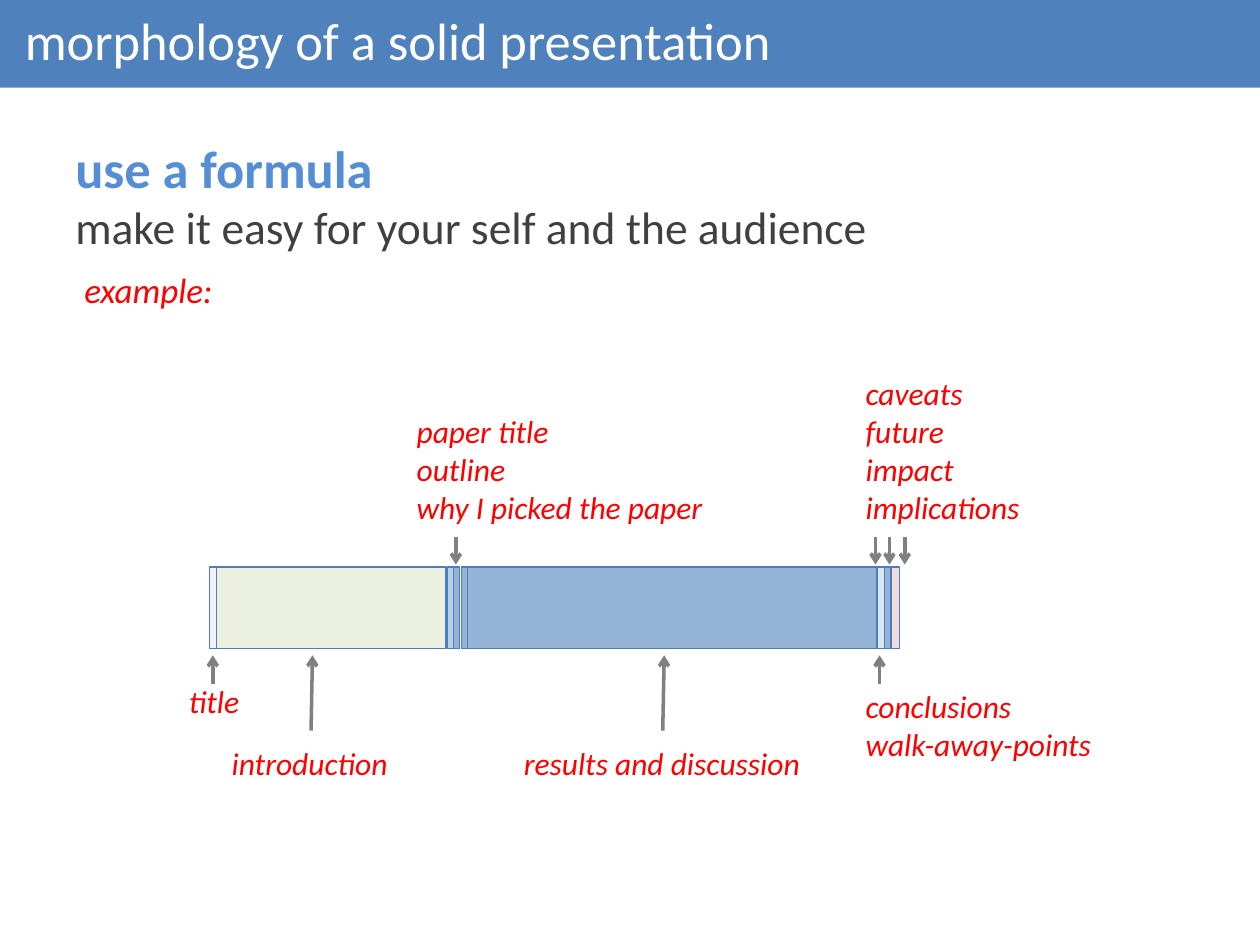
import pptx
import pptx.util
import pptx.dml.color
import pptx.enum.shapes
import pptx.enum.text
import pptx.oxml
import pptx.oxml.ns

Cm, Pt = pptx.util.Cm, pptx.util.Pt
RGB = pptx.dml.color.RGBColor.from_string
RECT = pptx.enum.shapes.MSO_SHAPE.RECTANGLE
STRAIGHT = pptx.enum.shapes.MSO_CONNECTOR.STRAIGHT
LEFT = pptx.enum.text.PP_ALIGN.LEFT

HUES = {
    "band": "4F81BD", "white": "FFFFFF", "head": "558ED5", "body": "404040",
    "note": "FF0000", "arrow": "808080", "edge": "4B7EBC", "pale": "F2F2F2",
    "green": "EBF1DE", "light": "B9CDE5", "blue": "95B3D7", "ice": "DCE6F2",
    "pink": "F2DCDB",
}
FRAME = {
    "word_wrap": False,
    "auto_size": pptx.enum.text.MSO_AUTO_SIZE.NONE,
    "vertical_anchor": pptx.enum.text.MSO_ANCHOR.TOP,
    "margin_left": Cm(0.25), "margin_right": Cm(0.25),
    "margin_top": Cm(0.13), "margin_bottom": Cm(0.13),
}


def write(shape, rows):
    """Fill a shape with one paragraph per (text, hue, font values) row."""
    frame = shape.text_frame
    for name, value in FRAME.items():
        setattr(frame, name, value)
    frame.text = "\n".join(text for text, hue, style in rows)
    for para, (text, hue, style) in zip(frame.paragraphs, rows):
        para.alignment = LEFT
        font = para.runs[0].font
        font.color.rgb = RGB(HUES[hue])
        for name, value in {"name": "Calibri", **style}.items():
            setattr(font, name, value)


def block(left, top, width, height, hue):
    """Add a filled rectangle without line or shadow."""
    rect = slide.shapes.add_shape(RECT, Cm(left), Cm(top), Cm(width), Cm(height))
    rect.shadow.inherit = False
    rect.fill.solid()
    rect.fill.fore_color.rgb = RGB(HUES[hue])
    rect.line.fill.background()
    return rect


deck = pptx.Presentation()
deck.slide_width, deck.slide_height = Cm(25.4), Cm(19.05)
slide = deck.slides.add_slide(deck.slide_layouts[5])

# Title on its band
title = slide.shapes.title
place = {"left": Cm(0.25), "top": Cm(0.03), "width": Cm(15.75), "height": Cm(1.55)}
for name, value in place.items():
    setattr(title, name, value)
write(title, [("morphology of a solid presentation", "white", {"size": Pt(30)})])
band = block(-0.03, -0.03, 25.43, 1.8, "band")
title.element.addprevious(band.element)

# Heading
head = slide.shapes.add_textbox(Cm(1.27), Cm(2.62), Cm(16.69), Cm(2.64))
write(head, [
    ("use a formula", "head", {"size": Pt(30), "bold": True}),
    ("make it easy for your self and the audience", "body", {"size": Pt(26)}),
])

# Timeline: left, width, hue
for left, width, hue in [
    (4.22, 0.15, "pale"), (4.37, 4.62, "green"), (9.02, 0.13, "light"),
    (9.42, 8.53, "blue"), (17.68, 0.15, "ice"), (9.14, 0.13, "blue"),
    (17.96, 0.18, "pink"), (9.3, 0.13, "blue"),
]:
    part = block(left, 11.43, width, 1.65, hue)
    part.line.color.rgb = RGB(HUES["edge"])
    part.line.width = Pt(0.75)

# Notes: left, top, width, height, size, lines
for left, top, width, height, size, lines in [
    (1.45, 5.28, 3.2, 1.12, 20, ["example:"]),
    (3.56, 13.61, 1.57, 1.02, 18, ["title"]),
    (4.42, 14.86, 3.73, 1.02, 18, ["introduction"]),
    (8.15, 8.18, 6.4, 2.57, 18,
     ["paper title", "outline", "why I picked the paper"]),
    (10.31, 14.86, 6.17, 1.02, 18, ["results and discussion"]),
    (17.2, 13.72, 5.28, 1.8, 18, ["conclusions", "walk-away-points"]),
    (17.2, 7.42, 3.73, 3.33, 18,
     ["caveats", "future", "impact", "implications"]),
]:
    note = slide.shapes.add_textbox(Cm(left), Cm(top), Cm(width), Cm(height))
    style = {"size": Pt(size), "italic": True}
    write(note, [(line, "note", style) for line in lines])

# Arrows to the timeline: start x, start y, end x, end y
above = [(x, 10.82, x, 11.38) for x in (9.19, 17.65, 17.93, 18.24)]
below = [(x, 13.79, x, 13.21) for x in (4.29, 17.73)]
long = [(x, 14.73, x + 0.03, 13.21) for x in (6.27, 13.36)]
for ends in above + below + long:
    arrow = slide.shapes.add_connector(STRAIGHT, *[Cm(end) for end in ends])
    arrow.line.color.rgb = RGB(HUES["arrow"])
    arrow.line.width = Pt(2)
    props = arrow.element.spPr
    tip = pptx.oxml.parse_xml(
        f'<a:tailEnd {pptx.oxml.ns.nsdecls("a")} type="arrow"/>')
    props.find(pptx.oxml.ns.qn("a:ln")).append(tip)
    props.append(pptx.oxml.parse_xml(
        f'<a:effectLst {pptx.oxml.ns.nsdecls("a")}/>'))

deck.save("out.pptx")
